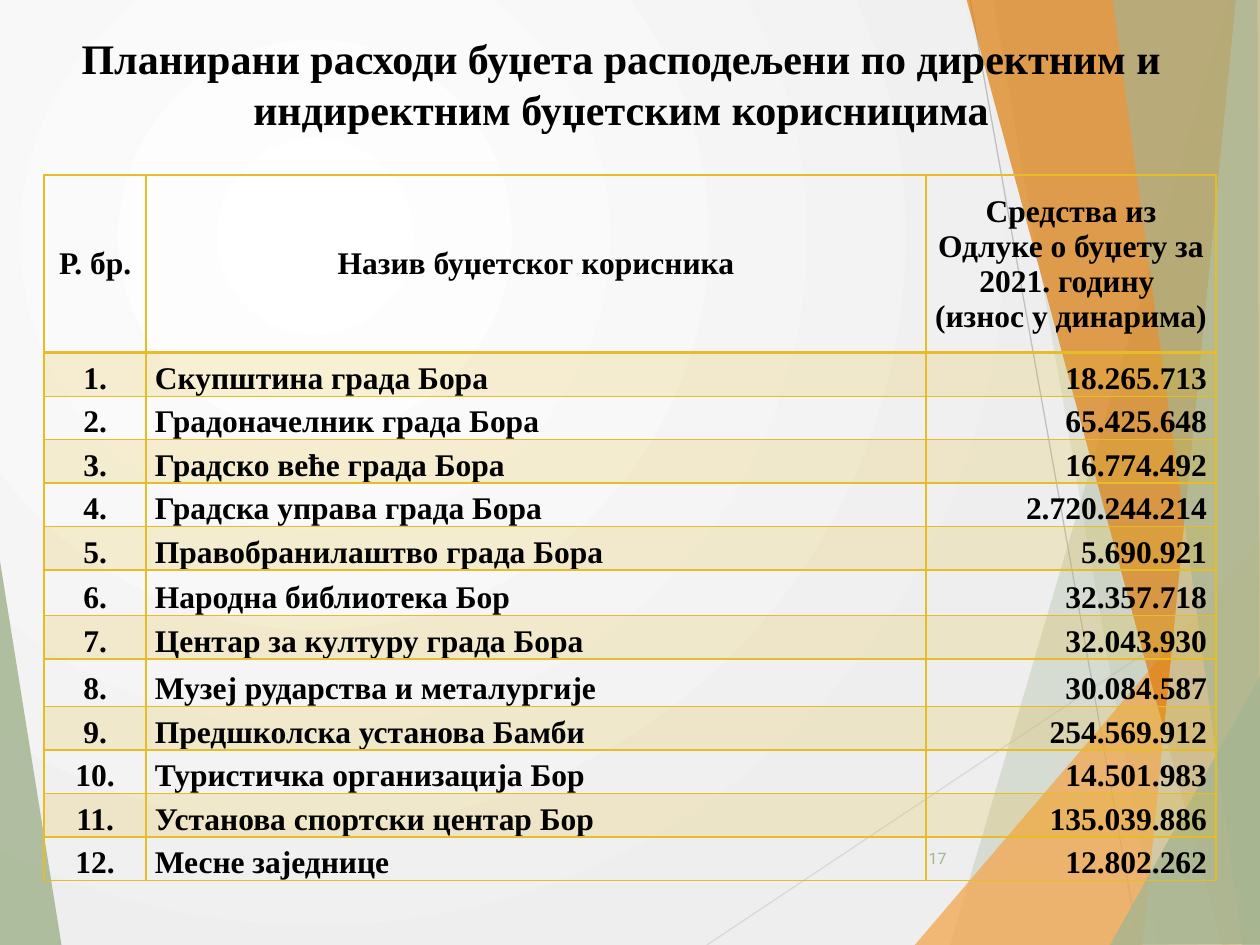
from lxml.etree import SubElement
from pptx import Presentation
from pptx.dml.color import RGBColor
from pptx.enum.shapes import MSO_CONNECTOR
from pptx.enum.text import MSO_ANCHOR, PP_ALIGN
from pptx.oxml.ns import qn
from pptx.util import Inches, Pt

SAGE = RGBColor(0xA5, 0xB5, 0x92)
PALE_SAGE = RGBColor(0xC9, 0xD3, 0xBE)
ORANGE = RGBColor(0xF3, 0xA4, 0x47)
DARK_ORANGE = RGBColor(0xDD, 0x7E, 0x0E)
GOLD = RGBColor(0xE7, 0xBC, 0x29)
LIGHT_GRAY = RGBColor(0xD9, 0xD9, 0xD9)
GRAY = RGBColor(0xBF, 0xBF, 0xBF)
WHITE = RGBColor(0xFF, 0xFF, 0xFF)
OFF_WHITE = RGBColor(0xEE, 0xEE, 0xEE)
BLACK = RGBColor(0, 0, 0)
SERIF = "Times New Roman"


def fill_translucent(fill, color, percent, parent):
    fill.solid()
    fill.fore_color.rgb = color
    color_element = parent.find(qn("a:solidFill")).find(qn("a:srgbClr"))
    SubElement(color_element, qn("a:alpha"), val=str(percent * 1000))


def write_text(text_frame, text, size, alignment, color=BLACK, font=SERIF, bold=True):
    text_frame.word_wrap = True
    paragraph = text_frame.paragraphs[0]
    paragraph.alignment = alignment
    run = paragraph.add_run()
    run.text = text
    run.font.size = Pt(size)
    run.font.name = font
    run.font.bold = bold
    run.font.color.rgb = color


presentation = Presentation()
presentation.slide_width = Inches(10)
presentation.slide_height = Inches(7.5)
slide = presentation.slides.add_slide(presentation.slide_layouts[6])

# Radial background
background_fill = slide.background.fill
background_fill.gradient()
for stop, color in zip(background_fill.gradient_stops, (WHITE, OFF_WHITE)):
    stop.color.rgb = color
gradient = slide.background._cSld.find(".//" + qn("a:gradFill"))
gradient.remove(gradient.find(qn("a:lin")))
radial = SubElement(gradient, qn("a:path"), path="circle")
SubElement(radial, qn("a:fillToRect"), l="50000", t="50000", r="100000", b="100000")

# Thin decorative lines
for start_x, start_y, end_x, end_y, color in [
    (5.61, 7.5, 10.01, 4.57, LIGHT_GRAY),
    (7.7, 0, 9.04, 7.5, GRAY),
]:
    line = slide.shapes.add_connector(
        MSO_CONNECTOR.STRAIGHT, Inches(start_x), Inches(start_y), Inches(end_x), Inches(end_y))
    line.line.color.rgb = color
    line.line.width = Pt(0.75)
    SubElement(line._element.spPr, qn("a:effectLst"))

# Translucent facets: corner points, colour, opacity in percent
facets = [
    ([(-0.01, 4.39), (0.49, 7.51), (-0.01, 7.5)], SAGE, 85),
    ([(9.75, 0), (7.54, 7.5), (10.02, 7.51), (10.01, 0.01)], SAGE, 30),
    ([(7.88, -0.01), (9.19, 7.5), (10.01, 7.5), (10.01, -0.01)], SAGE, 20),
    ([(7.26, 7.5), (10, 4.29), (10.01, 7.5)], ORANGE, 72),
    ([(7.67, -0.01), (9.7, 7.5), (10.01, 7.49), (10.01, -0.01)], DARK_ORANGE, 70),
    ([(9.81, -0.01), (9.07, 7.5), (10.01, 7.5), (10, -0.01)], PALE_SAGE, 70),
    ([(8.83, -0.01), (9.86, 7.5), (10, 7.5), (9.98, -0.01)], SAGE, 65),
    ([(8.81, 7.5), (10.01, 5.35), (10.01, 7.49)], SAGE, 80),
]
for points, color, opacity in facets:
    corners = [(Inches(x), Inches(y)) for x, y in points]
    builder = slide.shapes.build_freeform(*corners[0])
    builder.add_line_segments(corners[1:], close=True)
    facet = builder.convert_to_shape()
    facet.shadow.inherit = False
    facet.line.fill.background()
    fill_translucent(facet.fill, color, opacity, facet._element.spPr)

# Title
title = slide.shapes.add_textbox(Inches(0.43), Inches(0.21), Inches(9), Inches(1.25))
write_text(title.text_frame,
           "Планирани расходи буџета расподељени по директним и индиректним буџетским корисницима",
           24, PP_ALIGN.CENTER)

# Budget table
header = ("Р. бр.", "Назив буџетског корисника",
          "Средства из Одлуке о буџету за 2021. годину  (износ у динарима)")
users = [
    ("Скупштина града Бора", "18.265.713"),
    ("Градоначелник града Бора", "65.425.648"),
    ("Градско веће града Бора", "16.774.492"),
    ("Градска управа града Бора", "2.720.244.214"),
    ("Правобранилаштво града Бора", "5.690.921"),
    ("Народна библиотека Бор", "32.357.718"),
    ("Центар за културу града Бора", "32.043.930"),
    ("Музеј рударства и металургије", "30.084.587"),
    ("Предшколска установа Бамби", "254.569.912"),
    ("Туристичка организација Бор", "14.501.983"),
    ("Установа спортски центар Бор", "135.039.886"),
    ("Месне заједнице", "12.802.262"),
]
rows = [header] + [(f"{number}.", *user) for number, user in enumerate(users, 1)]
row_heights = {0: 1.41, 6: 0.36, 8: 0.38}
alignments = (PP_ALIGN.CENTER, PP_ALIGN.LEFT, PP_ALIGN.RIGHT)

table = slide.shapes.add_table(
    len(rows), 3, Inches(0.35), Inches(1.39), Inches(9.3), Inches(5.6)).table
for column, width in zip(table.columns, (0.81, 6.19, 2.3)):
    column.width = Inches(width)

for row_index, texts in enumerate(rows):
    is_header = row_index == 0
    table.rows[row_index].height = Inches(row_heights.get(row_index, 0.345))
    for column_index, text in enumerate(texts):
        cell = table.cell(row_index, column_index)
        cell.margin_left = cell.margin_right = Inches(0.07)
        cell.margin_top = cell.margin_bottom = 0
        cell.vertical_anchor = MSO_ANCHOR.MIDDLE if is_header else MSO_ANCHOR.BOTTOM
        write_text(cell.text_frame, text, 18,
                   PP_ALIGN.CENTER if is_header else alignments[column_index])

        # Borders come before the fill in the cell properties
        properties = cell._tc.get_or_add_tcPr()
        for side in ("L", "R", "T", "B"):
            thick = (is_header and side == "B") or (row_index == 1 and side == "T")
            border = SubElement(properties, qn(f"a:ln{side}"), w=str(Pt(2 if thick else 1)))
            border_fill = SubElement(border, qn("a:solidFill"))
            SubElement(border_fill, qn("a:srgbClr"), val=str(GOLD))
        if row_index % 2:
            fill_translucent(cell.fill, GOLD, 20, properties)
        else:
            cell.fill.background()

# Page number
page_number = slide.shapes.add_textbox(Inches(7.05), Inches(6.61), Inches(0.56), Inches(0.4))
page_number.text_frame.vertical_anchor = MSO_ANCHOR.MIDDLE
write_text(page_number.text_frame, "17", 9, PP_ALIGN.RIGHT, SAGE, "Roboto", False)

presentation.save("out.pptx")
